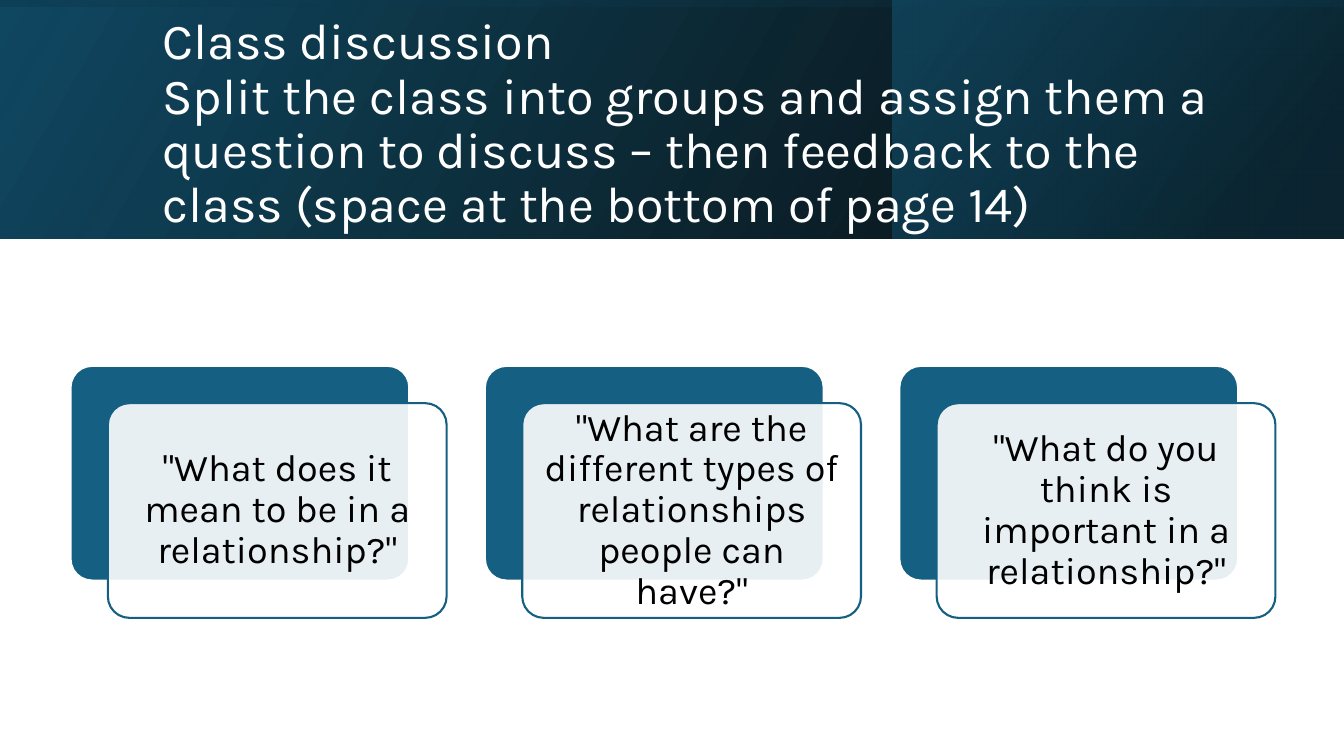
from lxml.etree import SubElement
from pptx import Presentation
from pptx.dml.color import RGBColor
from pptx.enum.shapes import MSO_SHAPE as Shape
from pptx.enum.text import MSO_ANCHOR as Anchor, MSO_AUTO_SIZE as AutoSize, PP_ALIGN as Align
from pptx.oxml.ns import qn
from pptx.util import Inches, Pt

WHITE = RGBColor(0xFF, 0xFF, 0xFF)
BLACK = RGBColor(0x00, 0x00, 0x00)
BLUE = RGBColor(0x15, 0x60, 0x82)
DEEP_BLUE = RGBColor(0x10, 0x48, 0x62)
NIGHT_BLUE = RGBColor(0x0B, 0x30, 0x41)
FONT = "Karla"

TITLE = (
    "Class discussion\v"
    "Split the class into groups and assign them a question to discuss "
    "– then feedback to the class (space at the bottom of page 14)"
)
QUESTIONS = [
    '"What does it mean to be in a relationship?"',
    '"What are the different types of relationships people can have?"',
    '"What do you think is important in a relationship?"',
]

WIDTH, HEIGHT = 13.33, 7.5
BAND_HEIGHT = 2.37
SIDE_WIDTH = 4.48
BANDS = [
    {"at": (0, 0, WIDTH, BAND_HEIGHT), "angle": 330, "rotation": 0,
     "stops": [(0, BLACK, 96), (100, DEEP_BLUE, 100)]},
    {"at": (WIDTH - SIDE_WIDTH, 0, SIDE_WIDTH, BAND_HEIGHT), "angle": 320, "rotation": 0,
     "stops": [(19, NIGHT_BLUE, 68), (100, BLUE, 48)]},
    {"at": ((WIDTH - BAND_HEIGHT) / 2, (BAND_HEIGHT - WIDTH) / 2, BAND_HEIGHT, WIDTH),
     "angle": 350, "rotation": 270,
     "stops": [(23, DEEP_BLUE, 16), (99, BLACK, 45)]},
]

TITLE_AT = (1.51, 0.38, 10.63, 1.72)
CARD_LEFT, CARD_TOP = 0.7, 3.63
CARD_WIDTH, CARD_HEIGHT = 3.36, 2.13
CARD_STEP = 4.11
CARD_SHIFT = 0.37


def set_opacity(holder, percent):
    for color in holder.iter(qn("a:srgbClr")):
        SubElement(color, qn("a:alpha")).set("val", str(percent * 1000))


def write(shape, text, size, color, align, inset=None):
    frame = shape.text_frame
    frame.word_wrap = True
    frame.auto_size = AutoSize.NONE
    frame.vertical_anchor = Anchor.MIDDLE
    if inset is not None:
        frame.margin_left = frame.margin_right = Inches(inset)
        frame.margin_top = frame.margin_bottom = Inches(inset)
    frame.text = text
    para = frame.paragraphs[0]
    para.alignment = align
    para.line_spacing = 0.9
    para.space_before = Pt(0)
    for span in para.runs:
        span.font.name = FONT
        span.font.size = Pt(size)
        span.font.color.rgb = color


def add_band(page, at, angle, rotation, stops):
    band = page.shapes.add_shape(Shape.RECTANGLE, *map(Inches, at))
    band.shadow.inherit = False
    band.line.fill.background()
    band.rotation = rotation
    band.element.spPr.find(qn("a:xfrm")).set("flipH", "1")
    band.fill.gradient()
    band.fill.gradient_angle = 360 - angle
    nodes = band.element.spPr.iter(qn("a:gs"))
    for stop, node, (position, color, opacity) in zip(band.fill.gradient_stops, nodes, stops):
        stop.position = position / 100
        stop.color.rgb = color
        set_opacity(node, opacity)


def add_card(page, left, top, fill, line, opacity=100):
    card = page.shapes.add_shape(
        Shape.ROUNDED_RECTANGLE, *map(Inches, (left, top, CARD_WIDTH, CARD_HEIGHT)))
    card.adjustments[0] = 0.1
    card.shadow.inherit = False
    card.fill.solid()
    card.fill.fore_color.rgb = fill
    if opacity < 100:
        set_opacity(card.element.spPr.find(qn("a:solidFill")), opacity)
    card.line.color.rgb = line
    card.line.width = Pt(1.5)
    return card


def main():
    deck = Presentation()
    deck.slide_width, deck.slide_height = Inches(WIDTH), Inches(HEIGHT)
    page = deck.slides.add_slide(deck.slide_layouts[5])
    page.background.fill.solid()
    page.background.fill.fore_color.rgb = WHITE

    for band in BANDS:
        add_band(page, **band)

    title = page.shapes.title
    title.left, title.top, title.width, title.height = map(Inches, TITLE_AT)
    write(title, TITLE, 36, WHITE, Align.LEFT)
    title.element.getparent().append(title.element)

    for column, question in enumerate(QUESTIONS):
        left = CARD_LEFT + column * CARD_STEP
        add_card(page, left, CARD_TOP, BLUE, WHITE)
        front = add_card(page, left + CARD_SHIFT, CARD_TOP + CARD_SHIFT, WHITE, BLUE, 90)
        write(front, question, 27, BLACK, Align.CENTER, inset=0.11)

    deck.save("out.pptx")


if __name__ == "__main__":
    main()
